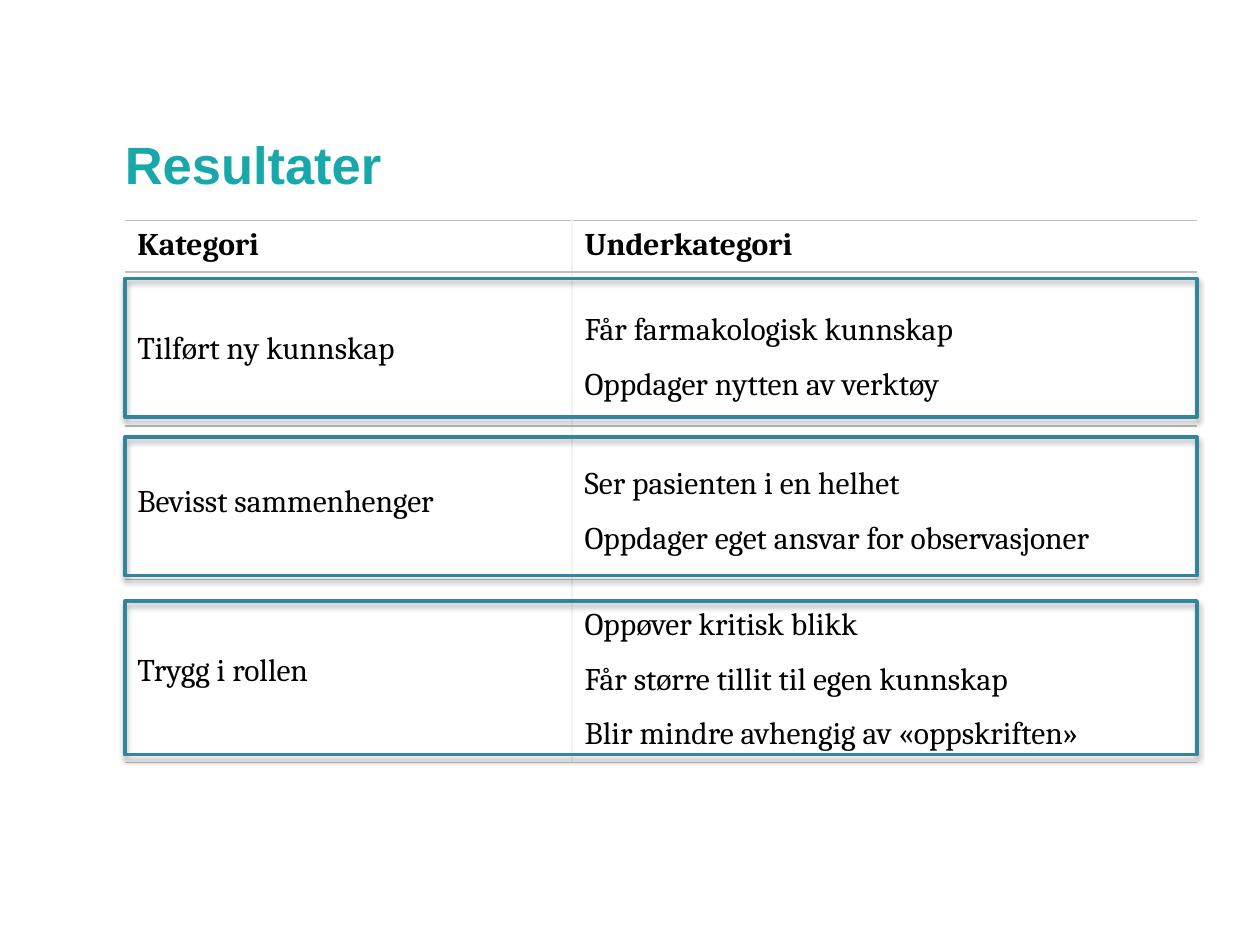
from lxml.etree import SubElement
from pptx import Presentation
from pptx.dml.color import RGBColor
from pptx.enum.shapes import MSO_SHAPE
from pptx.enum.text import MSO_ANCHOR
from pptx.oxml import parse_xml
from pptx.oxml.ns import nsdecls, qn
from pptx.util import Inches, Pt

TEAL = RGBColor(0x18, 0xA8, 0xA9)
FRAME_BLUE = RGBColor(0x31, 0x85, 0x9C)
BLACK = RGBColor(0, 0, 0)
ROW_LINE = RGBColor(0xBF, 0xBF, 0xBF)
COLUMN_LINE = RGBColor(0xF2, 0xF2, 0xF2)

LEFT, WIDTH = 0.99, 8.51
COLUMN_WIDTHS = [3.55, 4.96]
HEADER_HEIGHT, ROW_HEIGHT = 0.41, 1.22
HEADINGS = ["Kategori", "Underkategori"]
CATEGORIES = [
    ("Tilført ny kunnskap",
     ["Får farmakologisk kunnskap", "Oppdager nytten av verktøy"]),
    ("Bevisst sammenhenger",
     ["Ser pasienten i en helhet", "Oppdager eget ansvar for observasjoner"]),
    ("Trygg i rollen",
     ["Oppøver kritisk blikk", "Får større tillit til egen kunnskap",
      "Blir mindre avhengig av «oppskriften»"]),
]
FRAMES = [(2.21, 1.1), (3.47, 1.1), (4.77, 1.22)]  # top, height


def add_span(para, text, font, size, color, bold=False):
    span = para.add_run()
    span.text = text
    span.font.name = font
    span.font.size = Pt(size)
    span.font.bold = bold
    span.font.color.rgb = color


def add_title(page, text):
    box = page.shapes.add_textbox(
        Inches(LEFT), Inches(0.3), Inches(WIDTH), Inches(1.25))
    frame = box.text_frame
    frame.word_wrap = True
    frame.vertical_anchor = MSO_ANCHOR.BOTTOM
    frame.margin_left = frame.margin_right = 0
    frame.margin_top = frame.margin_bottom = 0
    para = frame.paragraphs[0]
    para.line_spacing = Pt(32)
    add_span(para, text, "Arial", 30, TEAL, bold=True)


def set_borders(cell, left, right):
    """Draw row lines above and below; column lines only where asked."""
    sides = [("a:lnL", COLUMN_LINE if left else None),
             ("a:lnR", COLUMN_LINE if right else None),
             ("a:lnT", ROW_LINE), ("a:lnB", ROW_LINE)]
    properties = cell._tc.get_or_add_tcPr()
    for position, (tag, color) in enumerate(sides):
        line = SubElement(properties, qn(tag), w=str(Pt(1)))
        properties.insert(position, line)
        if color is None:
            SubElement(line, qn("a:noFill"))
        else:
            fill = SubElement(line, qn("a:solidFill"))
            SubElement(fill, qn("a:srgbClr"), val=str(color))


def fill_cell(cell, lines, bold=False, spacing=None):
    cell.fill.background()
    frame = cell.text_frame
    for index, text in enumerate(lines):
        para = frame.paragraphs[0] if index == 0 else frame.add_paragraph()
        if spacing:
            para.line_spacing = spacing
        add_span(para, text, "Cambria", 18, BLACK, bold)


def add_result_table(page):
    height = HEADER_HEIGHT + ROW_HEIGHT * len(CATEGORIES)
    table = page.shapes.add_table(
        len(CATEGORIES) + 1, len(HEADINGS), Inches(LEFT), Inches(1.75),
        Inches(WIDTH), Inches(height)).table
    table.first_row = table.horz_banding = False
    for column, width in zip(table.columns, COLUMN_WIDTHS):
        column.width = Inches(width)
    table.rows[0].height = Inches(HEADER_HEIGHT)

    for column, heading in enumerate(HEADINGS):
        fill_cell(table.cell(0, column), [heading], bold=True)
    for row, (category, subcategories) in enumerate(CATEGORIES, start=1):
        table.rows[row].height = Inches(ROW_HEIGHT)
        fill_cell(table.cell(row, 0), [category])
        fill_cell(table.cell(row, 1), subcategories, spacing=1.5)
        for column in range(len(HEADINGS)):
            table.cell(row, column).vertical_anchor = MSO_ANCHOR.MIDDLE

    for row in table.rows:
        for column, cell in enumerate(row.cells):
            set_borders(cell, left=column > 0,
                        right=column < len(HEADINGS) - 1)


def add_frame(page, top, height):
    shape = page.shapes.add_shape(
        MSO_SHAPE.RECTANGLE, Inches(LEFT), Inches(top),
        Inches(WIDTH), Inches(height))
    shape.fill.background()
    shape.line.color.rgb = FRAME_BLUE
    shape.line.width = Pt(2)
    # Soft shadow straight below the outline
    shape._element.spPr.append(parse_xml(
        f'<a:effectLst {nsdecls("a")}>'
        f'<a:outerShdw blurRad="{Pt(3.1)}" dist="{Pt(1.8)}" dir="5400000" '
        'rotWithShape="0"><a:srgbClr val="000000"><a:alpha val="35000"/>'
        '</a:srgbClr></a:outerShdw></a:effectLst>'))


def main():
    deck = Presentation()
    deck.slide_width, deck.slide_height = Inches(10), Inches(7.5)
    page = deck.slides.add_slide(deck.slide_layouts[6])

    add_title(page, "Resultater")
    add_result_table(page)
    # One frame around each category
    for top, height in FRAMES:
        add_frame(page, top, height)

    deck.save("out.pptx")


if __name__ == "__main__":
    main()
